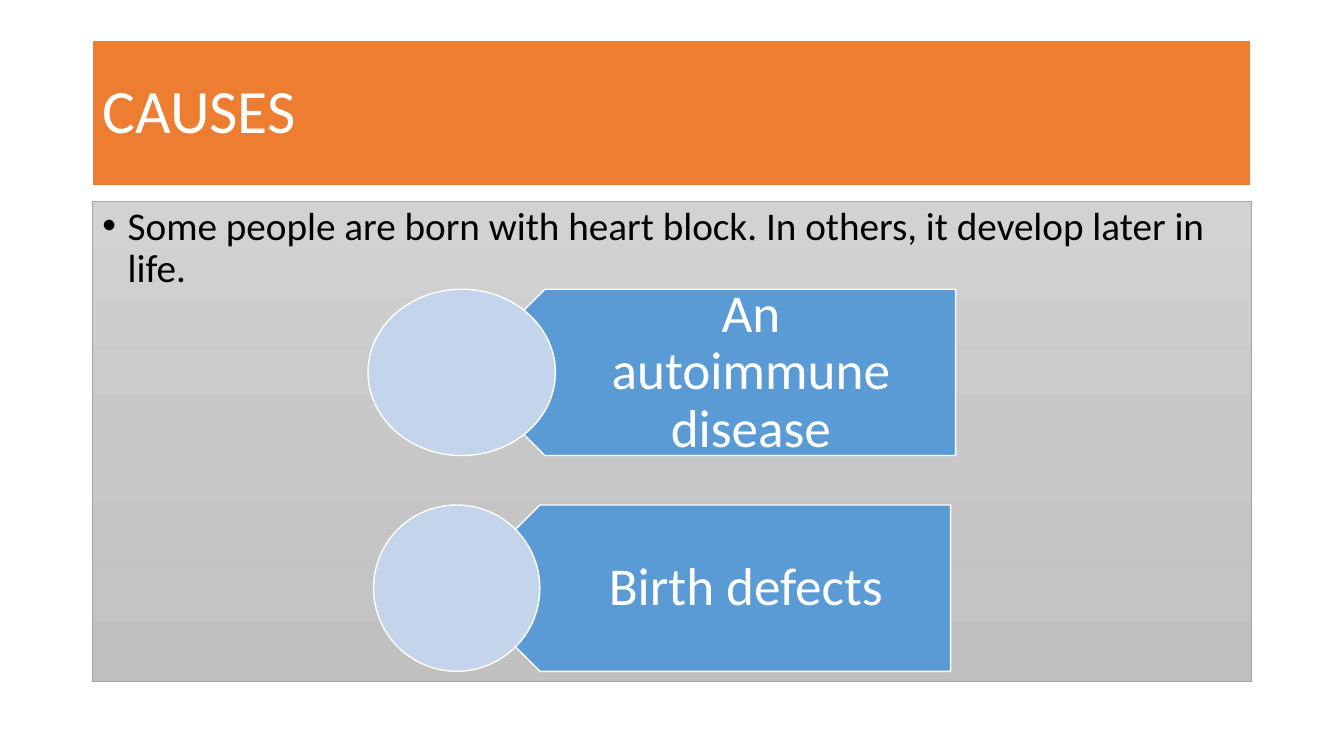
"""Build the slide on the causes of heart block."""
from copy import deepcopy

from pptx import Presentation
from pptx import util as u
from pptx.dml.color import RGBColor
from pptx.enum import shapes, text

FONT = "Calibri"
WHITE, BLACK = "FFFFFF", "000000"
ORANGE, BLUE, PALE_BLUE, GREY = "ED7D31", "5B9BD5", "C4D5EB", "A5A5A5"
GRADIENT = [(0, "D2D2D2"), (0.5, "C8C8C8"), (1, "C0C0C0")]
PLATE_WIDTH, CARD_HEIGHT = 352.8, 118.8
CAUSES = [
    ("An autoimmune disease", 329.8, 206.6, 133.9),
    ("Birth defects", 326.2, 360.7, 118.8),
]


def set_values(target, values):
    """Set each attribute named in values on the target."""
    for name, value in values.items():
        setattr(target, name, value)


def color(hex_value):
    """Turn a hex string into a colour."""
    return RGBColor.from_string(hex_value)


def place(shape, left, top, width, height):
    """Move and size a shape in points."""
    box = {"left": left, "top": top, "width": width, "height": height}
    set_values(shape, {name: u.Pt(value) for name, value in box.items()})


def outline(shape, hex_value, width):
    """Give a shape a solid outline."""
    shape.line.color.rgb = color(hex_value)
    shape.line.width = u.Pt(width)


def paint(shape, hex_value):
    """Give a shape a solid fill."""
    shape.fill.solid()
    shape.fill.fore_color.rgb = color(hex_value)


def paint_gradient(shape, stops):
    """Give a shape a three-stop gradient running downwards."""
    shape.fill.gradient()
    shape.fill.gradient_angle = 270
    stop_list = shape.fill._fill._gradFill.gsLst
    stop_list.insert(1, deepcopy(stop_list[0]))
    for element, stop, (position, hex_value) in zip(
        stop_list, shape.fill.gradient_stops, stops
    ):
        element.set("pos", str(int(position * 100000)))
        stop.color.rgb = color(hex_value)


def write(shape, words, size, hex_value, frame_format, paragraph_format):
    """Write one formatted paragraph into a shape."""
    frame = shape.text_frame
    frame.text = words
    set_values(frame, {"word_wrap": True, "auto_size": text.MSO_AUTO_SIZE.NONE})
    set_values(frame, frame_format)
    paragraph = frame.paragraphs[0]
    set_values(paragraph, {"line_spacing": 0.9, **paragraph_format})
    font = paragraph.runs[0].font
    set_values(font, {"name": FONT, "size": u.Pt(size)})
    font.color.rgb = color(hex_value)
    return paragraph


def add_title(slide, words):
    """Fill the title placeholder."""
    title = slide.shapes.title
    place(title, 66, 28.8, 828, 104.4)
    paint(title, ORANGE)
    outline(title, WHITE, 1.5)
    write(title, words, 44, WHITE,
          {"vertical_anchor": text.MSO_ANCHOR.MIDDLE},
          {"alignment": text.PP_ALIGN.LEFT})


def add_body(slide, words):
    """Fill the body placeholder with one bullet."""
    body = slide.placeholders[1]
    place(body, 66, 144, 828, 342.7)
    paint_gradient(body, GRADIENT)
    outline(body, GREY, 0.5)
    paragraph = write(body, words, 28, BLACK,
                      {"vertical_anchor": text.MSO_ANCHOR.TOP},
                      {"space_before": u.Pt(10)})
    properties = paragraph._p.get_or_add_pPr()
    properties.set("marL", str(u.Pt(18)))
    properties.set("indent", str(u.Pt(-18)))


def add_card_shape(group, kind, box, fill):
    """Add a filled preset shape with a white outline."""
    shape = group.shapes.add_shape(kind, *map(u.Pt, box))
    shape.shadow.inherit = False
    paint(shape, fill)
    outline(shape, WHITE, 1)
    return shape


def add_cause(group, words, left, top, circle_width):
    """Add a left-pointing plate, its label and the circle on its tip."""
    plate = add_card_shape(group, shapes.MSO_SHAPE.PENTAGON,
                           (left, top, PLATE_WIDTH, CARD_HEIGHT), BLUE)
    plate.rotation = 180
    inset = CARD_HEIGHT / 4
    label_box = (left + inset, top, PLATE_WIDTH - inset, CARD_HEIGHT)
    label = group.shapes.add_textbox(*map(u.Pt, label_box))
    write(label, words, 38, WHITE,
          {"vertical_anchor": text.MSO_ANCHOR.MIDDLE,
           "margin_left": u.Pt(52.4), "margin_right": u.Pt(21.6),
           "margin_top": u.Pt(11.4), "margin_bottom": u.Pt(11.4)},
          {"alignment": text.PP_ALIGN.CENTER})
    add_card_shape(group, shapes.MSO_SHAPE.OVAL,
                   (left - circle_width / 2, top, circle_width, CARD_HEIGHT),
                   PALE_BLUE)


def main():
    """Build and save the presentation."""
    presentation = Presentation()
    set_values(presentation,
               {"slide_width": u.Pt(960), "slide_height": u.Pt(540)})
    slide = presentation.slides.add_slide(presentation.slide_layouts[1])
    add_title(slide, "CAUSES")
    add_body(slide, "Some people are born with heart block. "
                    "In others, it develop later in life.")
    group = slide.shapes.add_group_shape()
    for cause in CAUSES:
        add_cause(group, *cause)
    presentation.save("out.pptx")


if __name__ == "__main__":
    main()
